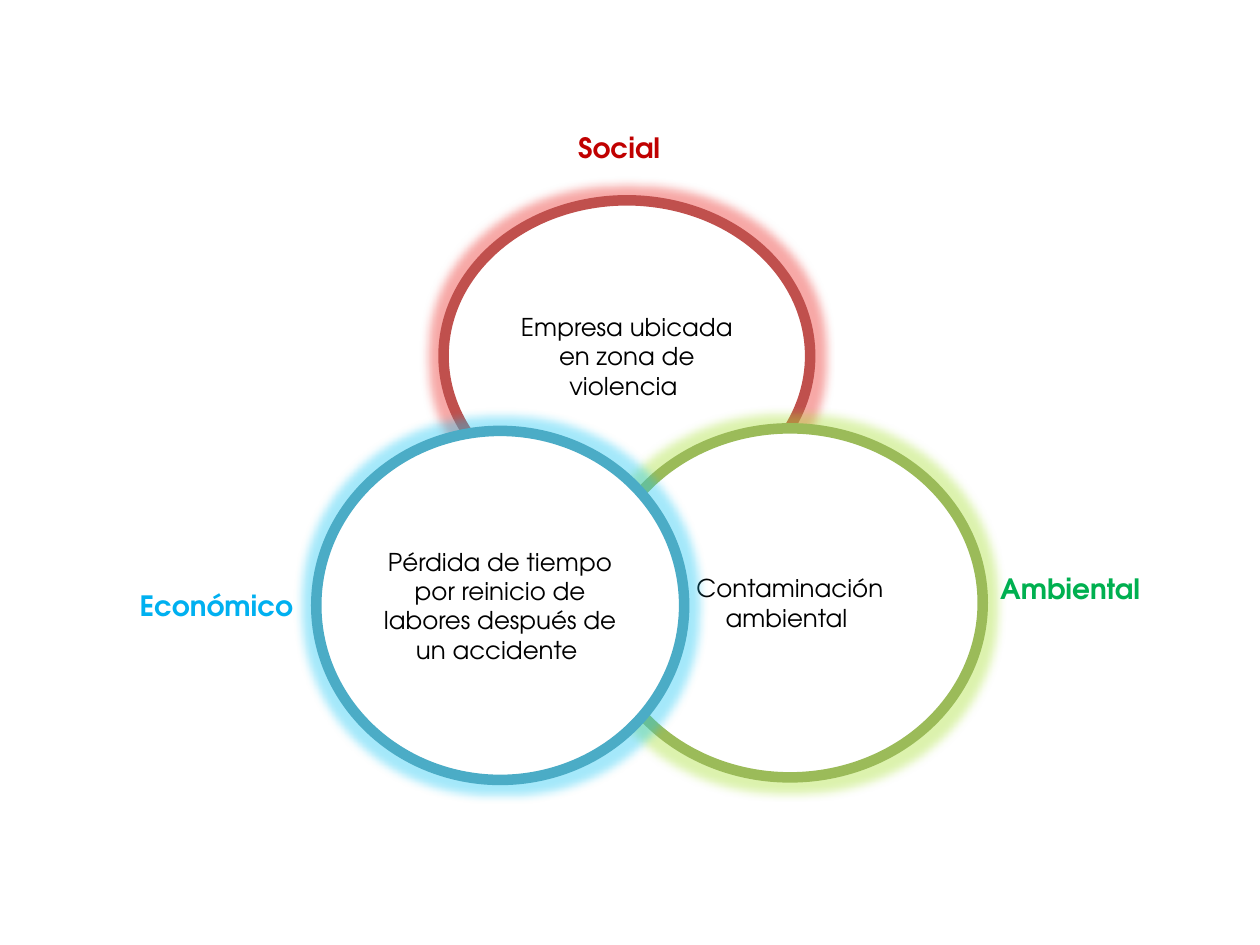
from dataclasses import dataclass

from lxml.etree import SubElement
from pptx import Presentation
from pptx.dml.color import RGBColor
from pptx.enum.shapes import MSO_SHAPE as Shape
from pptx.enum.text import MSO_ANCHOR as Anchor, MSO_AUTO_SIZE as AutoSize, PP_ALIGN as Align
from pptx.oxml.ns import qn
from pptx.util import Inches, Pt


@dataclass(frozen=True)
class Theme:
    """Colours, font and sizes of the slide."""
    font: str = "TeX Gyre Adventor"
    body_size: int = 14
    label_size: int = 16
    ring_width: int = 6
    glow_radius: float = 0.15
    text: str = "000000"
    paper: str = "FFFFFF"
    social_ring: str = "C0504D"
    ambiental_ring: str = "9BBB59"
    economico_ring: str = "4BACC6"
    social: str = "C00000"
    ambiental: str = "00B050"
    economico: str = "00B0F0"


THEME = Theme()


def apply_format(target, values):
    """Set every attribute named in a dict of format values."""
    for name, value in values.items():
        setattr(target, name, value)


def write_text(frame, text, size, color, bold, align):
    """Write one formatted paragraph into a text frame."""
    paragraph = frame.paragraphs[0]
    paragraph.alignment = align
    run = paragraph.add_run()
    run.text = text
    apply_format(run.font, {"name": THEME.font, "size": Pt(size), "bold": bold})
    run.font.color.rgb = RGBColor.from_string(color)


def add_glow(shape, color):
    """Surround a shape with a soft translucent glow."""
    shape.shadow.inherit = False
    effects = shape._element.spPr.find(qn("a:effectLst"))
    glow = SubElement(effects, qn("a:glow"), rad=str(Inches(THEME.glow_radius)))
    tint = SubElement(glow, qn("a:srgbClr"), val=color)
    SubElement(tint, qn("a:satMod"), val="175000")
    SubElement(tint, qn("a:alpha"), val="40000")


def add_circle(slide, box, color, text):
    """Add a glowing ring with centred text."""
    shape = slide.shapes.add_shape(Shape.OVAL, *map(Inches, box))
    shape.fill.solid()
    shape.fill.fore_color.rgb = RGBColor.from_string(THEME.paper)
    shape.line.color.rgb = RGBColor.from_string(color)
    shape.line.width = Pt(THEME.ring_width)
    add_glow(shape, color)
    apply_format(shape.text_frame, {"word_wrap": True, "vertical_anchor": Anchor.MIDDLE})
    write_text(shape.text_frame, text, THEME.body_size, THEME.text, False, Align.CENTER)


def add_label(slide, box, color, text):
    """Add the bold name of a circle."""
    frame = slide.shapes.add_textbox(*map(Inches, box)).text_frame
    apply_format(frame, {"word_wrap": False, "auto_size": AutoSize.SHAPE_TO_FIT_TEXT})
    write_text(frame, text, THEME.label_size, color, True, Align.LEFT)


def main():
    """Build the slide and save it."""
    presentation = Presentation()
    apply_format(presentation, {"slide_width": Inches(10), "slide_height": Inches(7.5)})
    slide = presentation.slides.add_slide(presentation.slide_layouts[6])
    circles = [
        ((3.52, 1.59, 2.91, 2.47), THEME.social_ring, "Empresa ubicada en zona de violencia "),
        ((4.74, 3.4, 3.06, 2.77), THEME.ambiental_ring, "Contaminación ambiental "),
        ((2.51, 3.42, 2.92, 2.77), THEME.economico_ring,
         "Pérdida de tiempo por reinicio de labores después de un accidente "),
    ]
    labels = [
        ((1.01, 4.62, 1.5, 0.37), THEME.economico, "Económico"),
        ((4.49, 0.99, 0.93, 0.4), THEME.social, "Social "),
        ((7.84, 4.49, 1.33, 0.37), THEME.ambiental, "Ambiental"),
    ]
    for circle in circles:
        add_circle(slide, *circle)
    for label in labels:
        add_label(slide, *label)
    presentation.save("out.pptx")


if __name__ == "__main__":
    main()
